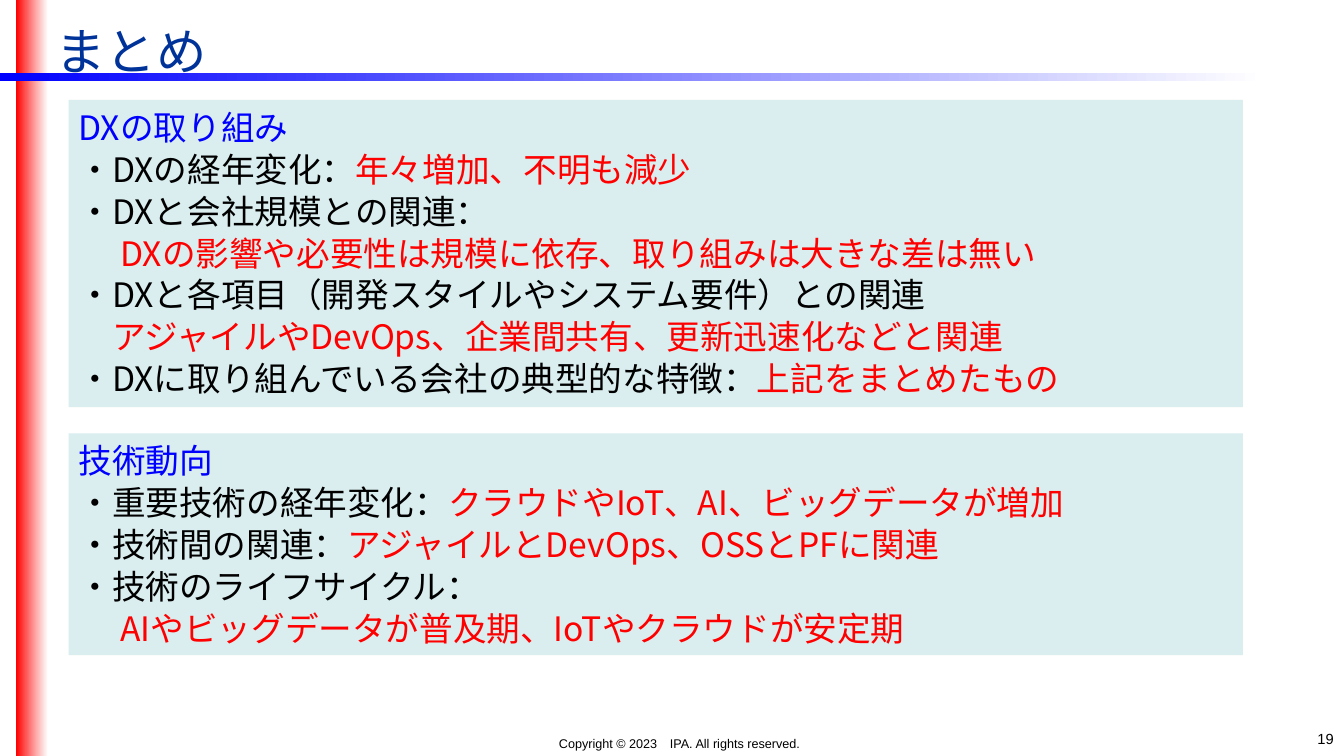
from pptx import Presentation
from pptx.dml.color import RGBColor as Rgb
from pptx.enum.shapes import MSO_SHAPE as Shp
from pptx.enum.text import MSO_ANCHOR as Anc, MSO_AUTO_SIZE as Fit, PP_ALIGN as Al
from pptx.oxml.ns import qn
from pptx.util import Inches, Pt
from lxml.etree import SubElement as Sub

CELL = Inches(1 / 12)  # grid of 160 columns by 90 rows
BLUE, RED, BLACK, NAVY, PALE = "0000FF", "FF0000", "000000", "003399", "DAEDEF"
GOTHIC = "Noto Sans CJK JP"


def tint(code):
    return Rgb.from_string(code)


def apply(item, values):
    for key, value in values.items():
        setattr(item, key, value)


class Deck:
    def __init__(self):
        self.prs = Presentation()
        apply(self.prs, {"slide_width": 160 * CELL, "slide_height": 90 * CELL})
        self.slide = self.prs.slides.add_slide(self.prs.slide_layouts[6])

    def grid(self, *cells):
        return [round(n * CELL) for n in cells]

    def rect(self, *cells):
        box = self.slide.shapes.add_shape(Shp.RECTANGLE, *self.grid(*cells))
        box.shadow.inherit = False
        box.line.fill.background()
        return box

    def fade(self, cells, code, alpha=100):
        """Bar that fades from a colour to white, left to right."""
        bar = self.rect(*cells)
        bar.fill.gradient()
        bar.fill.gradient_angle = 0
        for stop, hue in zip(bar.fill.gradient_stops, (code, "FFFFFF")):
            stop.color.rgb = tint(hue)
        if alpha < 100:
            last = bar._element.xpath(".//a:gs/a:srgbClr")[-1]
            Sub(last, qn("a:alpha")).set("val", str(alpha * 1000))

    def run(self, para, text, code, size, face):
        run = para.add_run()
        run.text = text
        apply(run.font, {"size": Pt(size), "name": face})
        run.font.color.rgb = tint(code)
        Sub(run._r.get_or_add_rPr(), qn("a:ea")).set("typeface", face)

    def text(self, cells, text, code, size, face, align=Al.LEFT, **frame):
        box = self.slide.shapes.add_textbox(*self.grid(*cells)).text_frame
        apply(box, {"word_wrap": True, **frame})
        box.paragraphs[0].alignment = align
        self.run(box.paragraphs[0], text, code, size, face)

    def panel(self, top, lines):
        """Pale box; each line is (indent in columns, black, red)."""
        box = self.rect(8.16, top, 139.8, 5.1 * len(lines) + 0.9)
        box.fill.solid()
        box.fill.fore_color.rgb = tint(PALE)
        frame = box.text_frame
        apply(frame, {"word_wrap": True, "vertical_anchor": Anc.TOP,
                      "auto_size": Fit.SHAPE_TO_FIT_TEXT})
        for i, (indent, lead, point) in enumerate(lines):
            para = frame.add_paragraph() if i else frame.paragraphs[0]
            apply(para, {"alignment": Al.LEFT, "line_spacing": Pt(30)})
            if indent:
                prop = para._p.get_or_add_pPr()
                prop.set("marL", str(round(indent * CELL)))
                prop.set("indent", "0")
            for part, code in ((lead, BLACK if i else BLUE), (point, RED)):
                if part:
                    self.run(para, part, code, 24, GOTHIC)


def main():
    deck = Deck()

    # Frame bars
    deck.fade((1.92, 0, 3.72, 90), RED, 84)
    deck.fade((0, 8.64, 150.6, 0.96), BLUE)

    # Footer and title
    deck.text((32.4, 87, 96.96, 3), "Copyright © 2023　IPA. All rights reserved.",
              BLACK, 9, "Arial", Al.CENTER, auto_size=Fit.SHAPE_TO_FIT_TEXT)
    deck.text((122.64, 86.28, 37.32, 3.72), "19", BLACK, 10.5, "Arial", Al.RIGHT)
    deck.text((5.4, 2.16, 109.56, 7.56), "まとめ", NAVY, 36, GOTHIC,
              vertical_anchor=Anc.MIDDLE)

    # Summary panels
    deck.panel(51.6, [
        (0, "技術動向", ""),
        (0, "・重要技術の経年変化：", "クラウドやIoT、AI、ビッグデータが増加"),
        (0, "・技術間の関連：", "アジャイルとDevOps、OSSとPFに関連"),
        (0, "・技術のライフサイクル：", ""),
        (5, "", "AIやビッグデータが普及期、IoTやクラウドが安定期"),
    ])
    deck.panel(11.88, [
        (0, "DXの取り組み", ""),
        (0, "・DXの経年変化：", "年々増加、不明も減少"),
        (0, "・DXと会社規模との関連：", ""),
        (5, "", "DXの影響や必要性は規模に依存、取り組みは大きな差は無い"),
        (0, "・DXと各項目（開発スタイルやシステム要件）との関連", ""),
        (4, "", "アジャイルやDevOps、企業間共有、更新迅速化などと関連"),
        (0, "・DXに取り組んでいる会社の典型的な特徴：", "上記をまとめたもの"),
    ])

    deck.prs.save("out.pptx")


if __name__ == "__main__":
    main()
